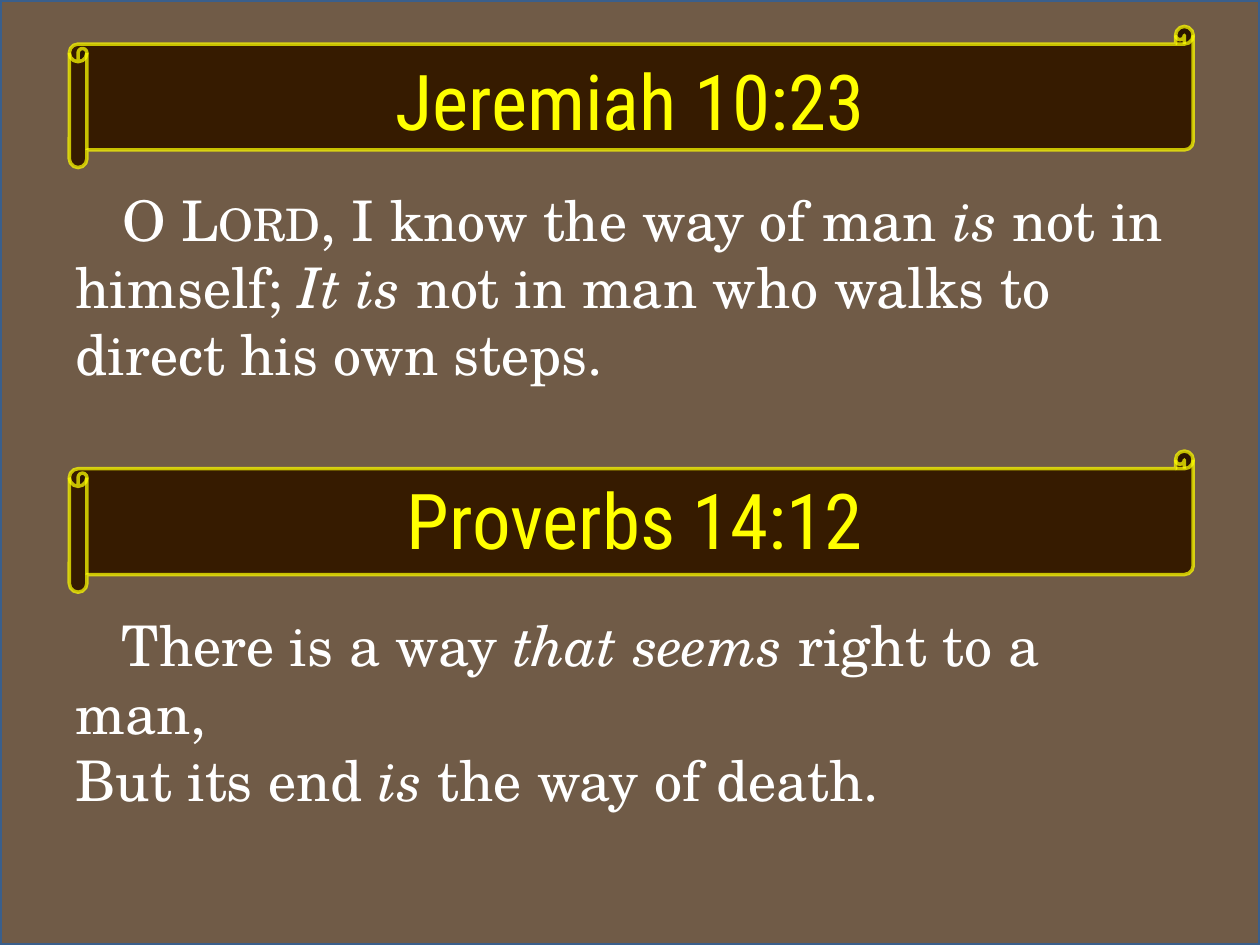
from lxml import etree
from pptx import Presentation
from pptx.dml.color import RGBColor
from pptx.enum.shapes import MSO_SHAPE as Shape
from pptx.enum.text import MSO_ANCHOR as Anchor, MSO_AUTO_SIZE as AutoSize, PP_ALIGN as Align
from pptx.oxml.ns import qn
from pptx.util import Inches, Pt

BROWN = RGBColor(0x3A, 0x1D, 0x00)
DARK_BROWN = RGBColor(0x36, 0x1B, 0x00)
BLUE = RGBColor(0x3A, 0x5F, 0x8C)
YELLOW = RGBColor(0xFF, 0xFF, 0x00)
WHITE = RGBColor(0xFF, 0xFF, 0xFF)

# Verse runs are (text, style); a line break inside a run is "\n".
PASSAGES = [
    {
        "reference": "Jeremiah 10:23", "scroll_top": 0.21,
        "title_at": (0.5, 0.33), "verse_top": 1.42,
        "verse": [("O ", ""), ("Lord", "small caps"), (", I know the way of man ", ""),
                  ("is", "italic"), (" not in himself; ", ""), ("It is", "italic"),
                  (" not in man who walks to direct his own steps.", "")],
    },
    {
        "reference": "Proverbs 14:12", "scroll_top": 3.58,
        "title_at": (0.54, 3.66), "verse_top": 4.8,
        "verse": [("There is a way ", ""), ("that seems", "italic"),
                  (" right to a man,\nBut its end ", ""), ("is", "italic"),
                  (" the way of death.", "")],
    },
]


def add_panel(kind, left, top, width, height, fill, fill_alpha, line, line_alpha):
    """Add a filled, outlined shape; alphas are percentages of opacity."""
    shape = slide.shapes.add_shape(kind, Inches(left), Inches(top), Inches(width), Inches(height))
    shape.shadow.inherit = False
    shape.fill.solid()
    shape.fill.fore_color.rgb = fill
    shape.line.color.rgb = line
    shape.line.width = Pt(2)
    colors = shape._element.spPr.iter(qn("a:srgbClr"))
    for color, alpha in zip(list(colors), (fill_alpha, line_alpha)):
        if alpha < 100:
            etree.SubElement(color, qn("a:alpha")).set("val", str(alpha * 1000))
    return shape


def prepare_text(shape, left, top, height, anchor):
    """Place a text shape and return its first paragraph."""
    shape.left, shape.top = Inches(left), Inches(top)
    shape.width, shape.height = Inches(9), Inches(height)
    frame = shape.text_frame
    frame.word_wrap = True
    frame.auto_size = AutoSize.NONE
    frame.vertical_anchor = anchor
    return frame.paragraphs[0]


presentation = Presentation()
presentation.slide_width, presentation.slide_height = Inches(10), Inches(7.5)
slide = presentation.slides.add_slide(presentation.slide_layouts[1])
title, body = slide.placeholders

panels = [add_panel(Shape.RECTANGLE, 0, 0, 10, 7.5, BROWN, 72, BLUE, 100)]
for passage in PASSAGES:
    panels.append(add_panel(Shape.HORIZONTAL_SCROLL, 0.55, passage["scroll_top"], 8.92, 1.12,
                            DARK_BROWN, 100, YELLOW, 73))
# Panels go behind the placeholders.
for panel in panels:
    title._element.addprevious(panel._element)

for index, passage in enumerate(PASSAGES):
    if index == 0:
        heading, verse = title, body
    else:
        heading, verse = [slide.shapes.add_textbox(0, 0, 0, 0) for _ in range(2)]

    paragraph = prepare_text(heading, *passage["title_at"], 0.92, Anchor.MIDDLE)
    paragraph.text = passage["reference"]
    paragraph.alignment = Align.CENTER
    paragraph.font.name = "Roboto Condensed"
    paragraph.font.size = Pt(44)
    paragraph.font.color.rgb = YELLOW

    paragraph = prepare_text(verse, 0.5, passage["verse_top"], 1.83, Anchor.TOP)
    paragraph.space_before = Pt(0)
    properties = paragraph._p.get_or_add_pPr()
    properties.set("marL", "0")
    properties.set("indent", str(Inches(0.37)))
    etree.SubElement(properties, qn("a:buNone"))
    paragraph.font.name = "TeX Gyre Schola"
    paragraph.font.size = Pt(32)
    paragraph.font.color.rgb = WHITE
    for text, style in passage["verse"]:
        for line_number, line in enumerate(text.split("\n")):
            if line_number:
                paragraph.add_line_break()
            run = paragraph.add_run()
            run.text = line
            if style == "italic":
                run.font.italic = True
            elif style == "small caps":
                run.font._element.set("cap", "small")

presentation.save("out.pptx")
